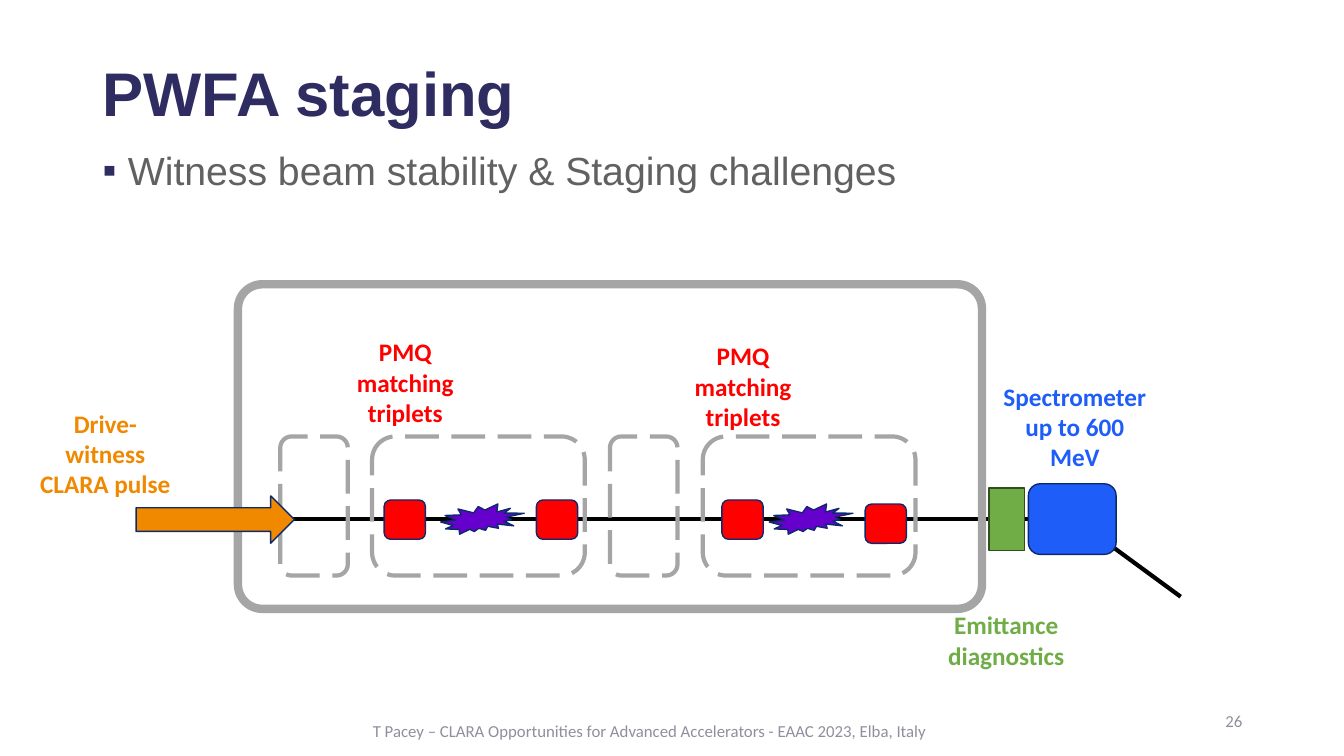
from typing import NamedTuple, Optional

from lxml.etree import SubElement
from pptx import Presentation
from pptx.dml.color import RGBColor
from pptx.enum.dml import MSO_LINE_DASH_STYLE as Dash
from pptx.enum.shapes import MSO_CONNECTOR, MSO_SHAPE as Preset
from pptx.enum.text import MSO_ANCHOR as Anchor, MSO_AUTO_SIZE as AutoSize, PP_ALIGN as Align
from pptx.oxml.ns import qn
from pptx.util import Inches, Pt

COLOURS = {
    "navy": "2E2C61", "text": "616161", "muted": "8F8F9E", "black": "000000",
    "grey": "A5A5A5", "outline": "0D296D", "blue": "1E5DF8", "orange": "F08900",
    "green": "70AD47", "dark green": "314C1F", "purple": "6600CC", "red": "FF0000",
}


class Part(NamedTuple):
    preset: Preset
    left: float
    top: float
    width: float
    height: float
    fill: Optional[str] = None
    line: str = "outline"
    weight: float = 1
    dash: Optional[Dash] = None
    corner: Optional[float] = None


class Label(NamedTuple):
    text: str
    left: float
    top: float
    width: float
    height: float
    colour: str
    size: float = 18
    bold: bool = True
    align: Align = Align.CENTER
    anchor: Anchor = Anchor.TOP
    font: str = "Calibri"


class Beam(NamedTuple):
    start: tuple[float, float]
    end: tuple[float, float]


def colour(name: str) -> RGBColor:
    return RGBColor.from_string(COLOURS[name])


def place(shape, label: Label) -> None:
    shape.left, shape.top = Inches(label.left), Inches(label.top)
    shape.width, shape.height = Inches(label.width), Inches(label.height)


def write(shape, label: Label):
    """Position a text shape, fill it with the label and return its paragraph."""
    place(shape, label)
    frame = shape.text_frame
    frame.word_wrap = True
    frame.auto_size = AutoSize.NONE
    frame.vertical_anchor = label.anchor
    paragraph = frame.paragraphs[0]
    paragraph.alignment = label.align
    run = paragraph.add_run()
    run.text = label.text
    run.font.name = label.font
    run.font.size = Pt(label.size)
    run.font.bold = label.bold
    run.font.color.rgb = colour(label.colour)
    return paragraph


def add_label(slide, label: Label):
    return write(slide.shapes.add_textbox(0, 0, 0, 0), label)


def add_bullet(paragraph, symbol: str, colour_name: str) -> None:
    properties = paragraph._p.get_or_add_pPr()
    properties.set("marL", str(Inches(0.25)))
    properties.set("indent", str(Inches(-0.25)))
    bullet_colour = SubElement(properties, qn("a:buClr"))
    SubElement(bullet_colour, qn("a:srgbClr")).set("val", COLOURS[colour_name])
    SubElement(properties, qn("a:buFont")).set("typeface", "Arial")
    SubElement(properties, qn("a:buChar")).set("char", symbol)


def add_part(slide, part: Part) -> None:
    shape = slide.shapes.add_shape(
        part.preset, Inches(part.left), Inches(part.top), Inches(part.width), Inches(part.height))
    shape.shadow.inherit = False
    if part.fill:
        shape.fill.solid()
        shape.fill.fore_color.rgb = colour(part.fill)
    else:
        shape.fill.background()
    shape.line.color.rgb = colour(part.line)
    shape.line.width = Pt(part.weight)
    if part.dash:
        shape.line.dash_style = part.dash
    if part.corner is not None:
        shape.adjustments[0] = part.corner


def add_beam(slide, beam: Beam) -> None:
    ends = [Inches(value) for value in (*beam.start, *beam.end)]
    connector = slide.shapes.add_connector(MSO_CONNECTOR.STRAIGHT, *ends)
    connector.line.color.rgb = colour("black")
    connector.line.width = Pt(3)
    SubElement(connector._element.spPr, qn("a:effectLst"))


def chamber(left: float, width: float) -> Part:
    return Part(Preset.ROUNDED_RECTANGLE, left, 4.33, width, 1.38,
                line="grey", weight=3, dash=Dash.LONG_DASH)


def magnet(left: float, top: float = 4.96) -> Part:
    return Part(Preset.ROUNDED_RECTANGLE, left, top, 0.41, 0.39, "red")


def plasma(left: float) -> Part:
    return Part(Preset.EXPLOSION2, left, 5, 0.83, 0.3, "purple")


TITLE = Label("PWFA staging", 0.92, 0.23, 11.5, 1.45, "navy", 44,
              align=Align.LEFT, anchor=Anchor.MIDDLE, font="Arial")
CHALLENGES = Label("Witness beam stability & Staging challenges", 0.92, 1.45, 11.5, 0.52,
                   "text", 28, False, Align.LEFT, font="Arial")
BEAMS = [Beam((1.37, 5.15), (10.66, 5.15)), Beam((10.66, 5.15), (11.71, 5.92))]
PARTS = [
    Part(Preset.ROUNDED_RECTANGLE, 2.36, 2.82, 7.38, 3.22, line="grey", weight=6, corner=0.075),
    *(chamber(left, 2.11) for left in (3.69, 6.97)),
    *(chamber(left, 0.67) for left in (2.78, 6.05)),
    Part(Preset.ROUNDED_RECTANGLE, 10.2, 4.8, 0.87, 0.7, "blue"),
    Part(Preset.RIGHT_ARROW, 1.35, 4.92, 1.57, 0.47, "orange"),
    Part(Preset.RECTANGLE, 9.81, 4.84, 0.35, 0.62, "green", "dark green"),
    plasma(4.37), plasma(7.63),
    magnet(3.81), magnet(5.32), magnet(7.16), magnet(8.58, 5),
]
LABELS = [
    Label("Drive-witness CLARA pulse", 0.26, 4, 1.57, 1.01, "orange"),
    Label("PMQ matching triplets", 3.21, 3.29, 1.62, 1.01, "red"),
    Label("PMQ matching triplets", 6.56, 3.33, 1.62, 1.01, "red"),
    Label("Spectrometer up to 600 MeV", 9.85, 3.73, 1.62, 1.01, "blue"),
    Label("Emittance diagnostics", 9.17, 6, 1.62, 0.71, "green"),
    Label("T Pacey – CLARA Opportunities for Advanced Accelerators - EAAC 2023, Elba, Italy",
          3.41, 7.05, 6.07, 0.4, "muted", 12, False, anchor=Anchor.MIDDLE),
    Label("26", 9.42, 6.95, 3, 0.4, "muted", 12, False, Align.RIGHT, Anchor.MIDDLE),
]


def main() -> None:
    presentation = Presentation()
    presentation.slide_width, presentation.slide_height = Inches(13.33), Inches(7.5)
    slide = presentation.slides.add_slide(presentation.slide_layouts[5])
    write(slide.shapes.title, TITLE).line_spacing = 0.9
    challenges = add_label(slide, CHALLENGES)
    add_bullet(challenges, "▪", "navy")
    challenges.line_spacing = 0.9
    for beam in BEAMS:
        add_beam(slide, beam)
    for part in PARTS:
        add_part(slide, part)
    for label in LABELS:
        add_label(slide, label)
    presentation.save("out.pptx")


if __name__ == "__main__":
    main()
